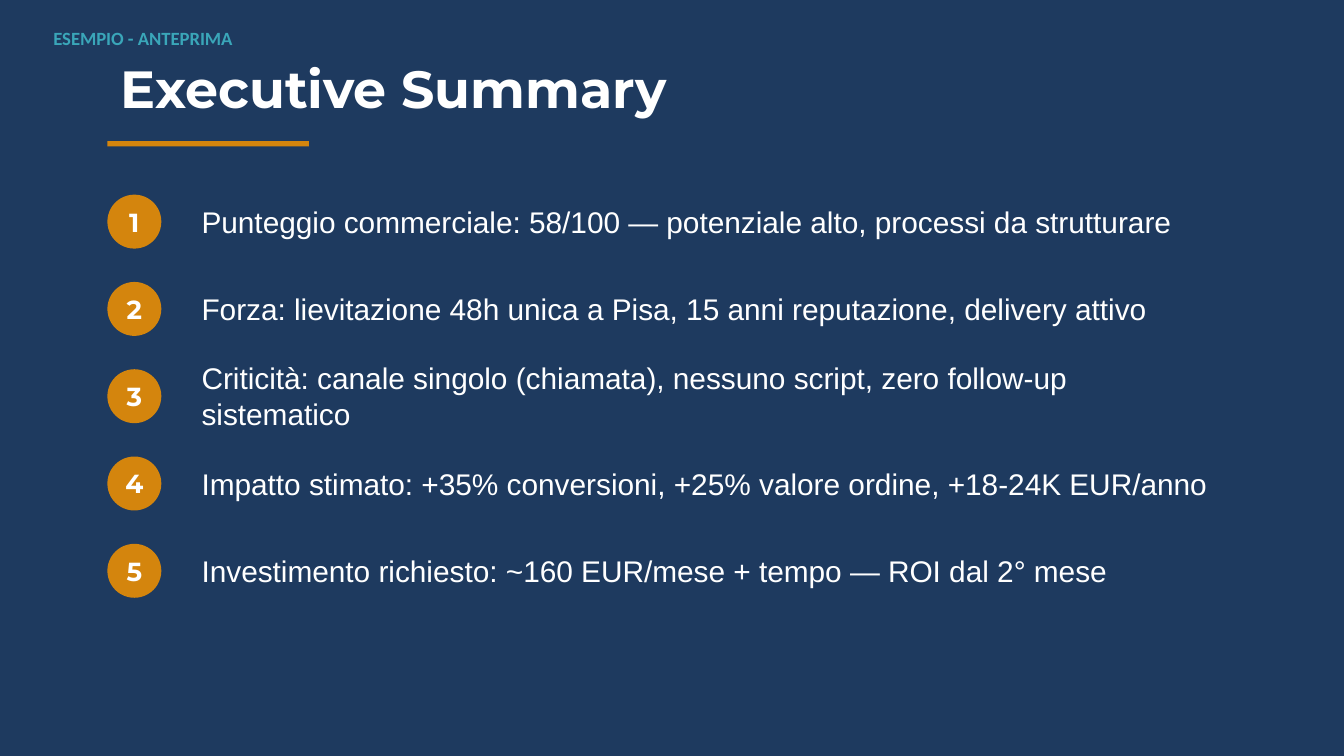
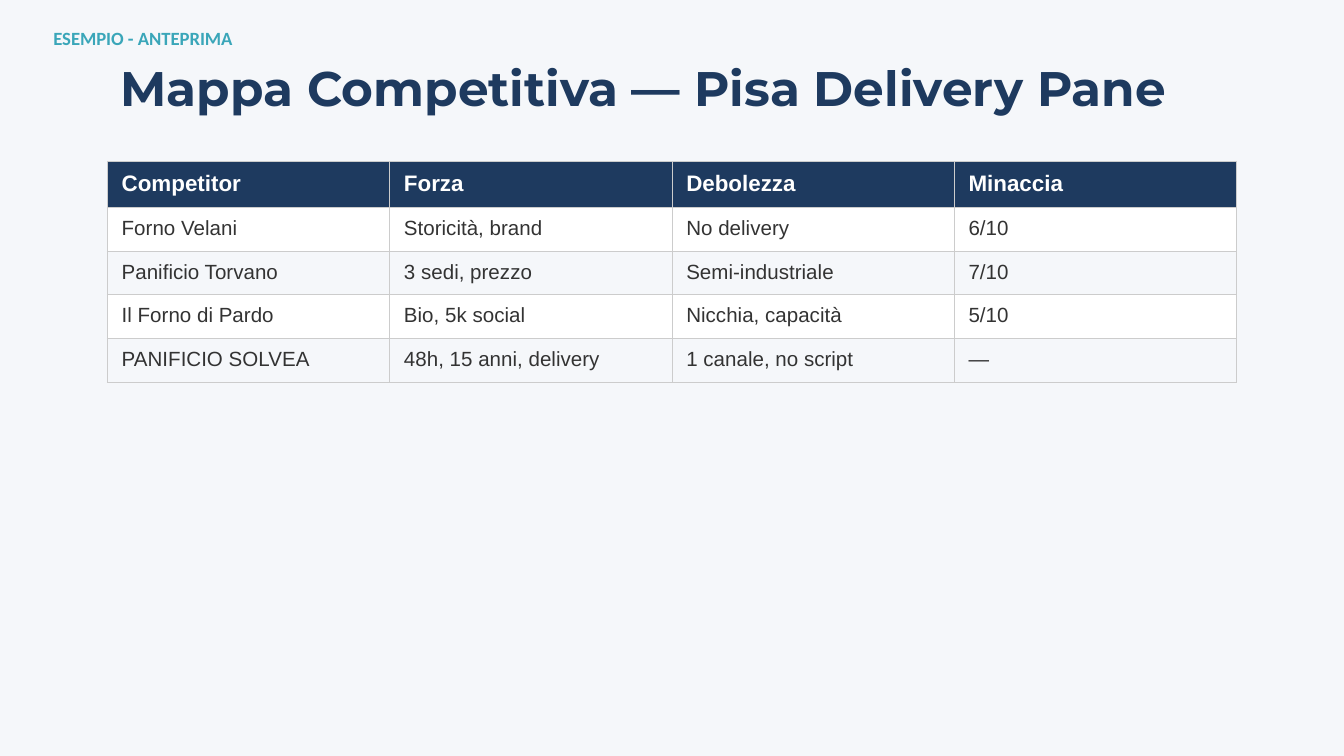
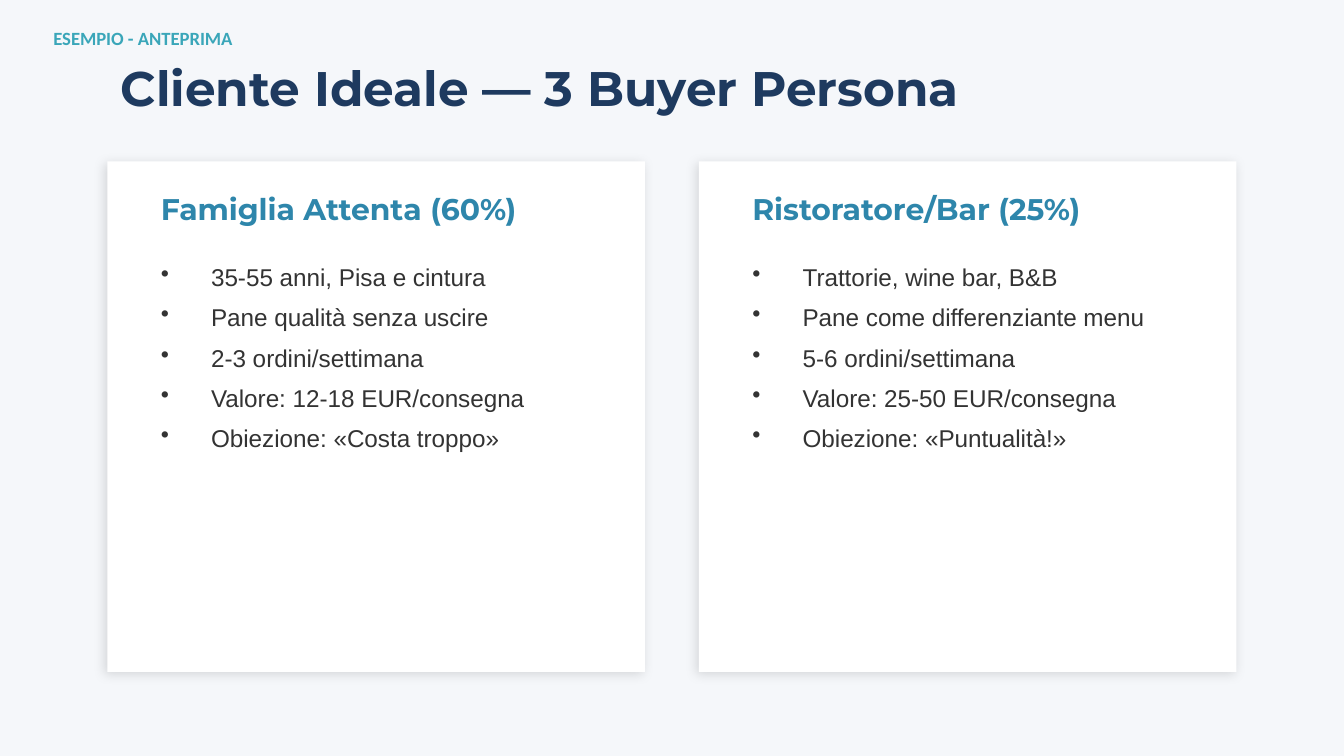
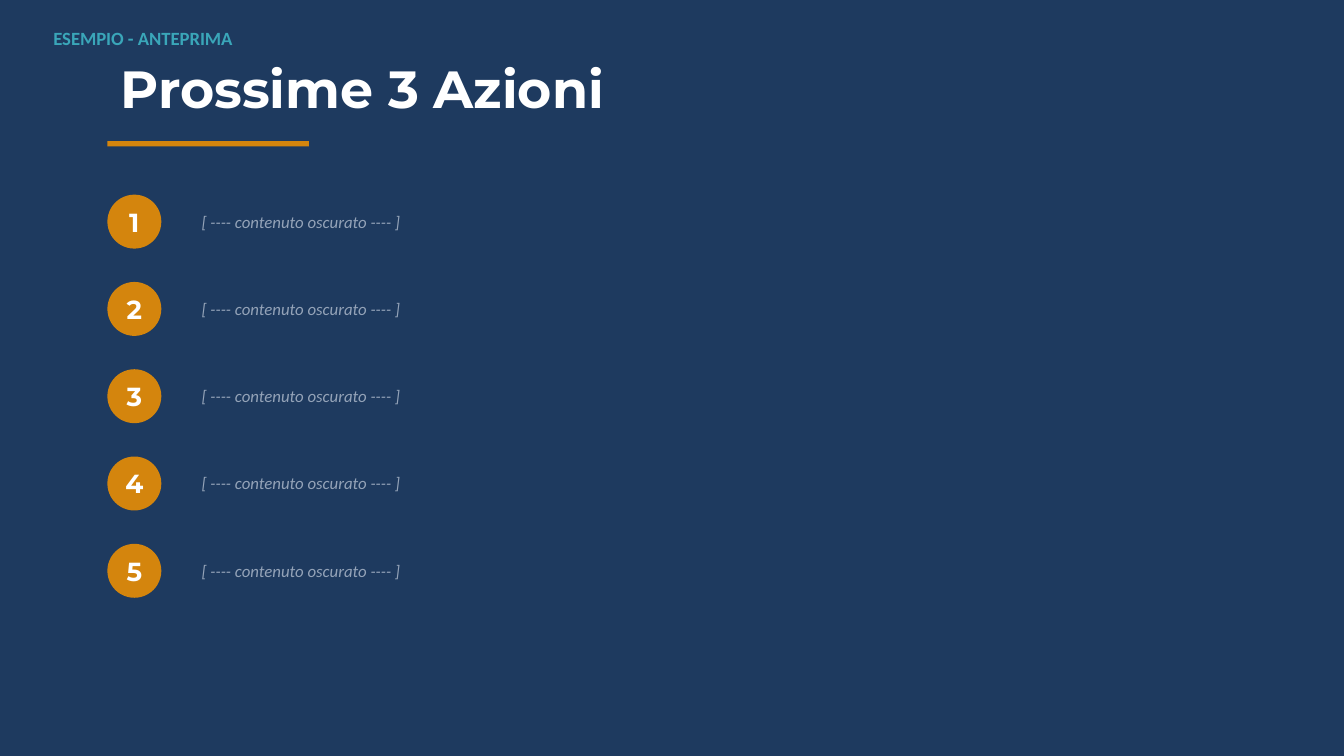
from dataclasses import dataclass

from lxml.etree import SubElement
from pptx import Presentation
from pptx.dml.color import RGBColor
from pptx.enum.shapes import MSO_SHAPE as Preset
from pptx.enum.text import MSO_ANCHOR as Anchor, MSO_AUTO_SIZE as AutoSize, PP_ALIGN as Align
from pptx.oxml.ns import qn
from pptx.util import Cm, Pt

NAVY = "1E3A5F"
ORANGE = "D4850D"
WHITE = "FFFFFF"
PALE = "F5F7FA"
INK = "333333"
GRID = "CCCCCC"
BLUE = "2E86AB"
TEAL = "3AA6B9"
GREY = "94A3B8"

MARGIN = 2.03
CONTENT_WIDTH = 21.34
CONTENT_TOP = 3.05


@dataclass(frozen=True)
class Style:
    font: str
    size: int
    color: str
    bold: bool = False
    italic: bool = False


@dataclass(frozen=True)
class Area:
    left: float
    top: float
    width: float
    height: float

    def lengths(self) -> tuple:
        return Cm(self.left), Cm(self.top), Cm(self.width), Cm(self.height)


@dataclass(frozen=True)
class Persona:
    name: str
    traits: tuple


DARK_TITLE = Style("Montserrat", 28, WHITE, bold=True)
LIGHT_TITLE = Style("Montserrat", 26, NAVY, bold=True)
NUMBER = Style("Montserrat", 14, WHITE, bold=True)
POINT = Style("Arial", 16, WHITE)
MASKED = Style("Calibri", 9, GREY, italic=True)
TAG = Style("Calibri", 10, TEAL, bold=True)
TABLE_HEAD = Style("Arial", 12, WHITE, bold=True)
TABLE_BODY = Style("Arial", 11, INK)
PERSONA_NAME = Style("Montserrat", 16, BLUE, bold=True)
TRAIT = Style("Arial", 13, INK)

SUMMARY = (
    "Punteggio commerciale: 58/100 — potenziale alto, processi da strutturare",
    "Forza: lievitazione 48h unica a Pisa, 15 anni reputazione, delivery attivo",
    "Criticità: canale singolo (chiamata), nessuno script, zero follow-up sistematico",
    "Impatto stimato: +35% conversioni, +25% valore ordine, +18-24K EUR/anno",
    "Investimento richiesto: ~160 EUR/mese + tempo — ROI dal 2° mese",
)
ACTIONS = ("[ ---- contenuto oscurato ---- ]",) * 5
COMPETITORS = (
    ("Competitor", "Forza", "Debolezza", "Minaccia"),
    ("Forno Velani", "Storicità, brand", "No delivery", "6/10"),
    ("Panificio Torvano", "3 sedi, prezzo", "Semi-industriale", "7/10"),
    ("Il Forno di Pardo", "Bio, 5k social", "Nicchia, capacità", "5/10"),
    ("PANIFICIO SOLVEA", "48h, 15 anni, delivery", "1 canale, no script", "—"),
)
PERSONAS = (
    Persona("Famiglia Attenta (60%)", (
        "35-55 anni, Pisa e cintura",
        "Pane qualità senza uscire",
        "2-3 ordini/settimana",
        "Valore: 12-18 EUR/consegna",
        "Obiezione: «Costa troppo»",
    )),
    Persona("Ristoratore/Bar (25%)", (
        "Trattorie, wine bar, B&B",
        "Pane come differenziante menu",
        "5-6 ordini/settimana",
        "Valore: 25-50 EUR/consegna",
        "Obiezione: «Puntualità!»",
    )),
)


def paint(fill, color: str) -> None:
    fill.solid()
    fill.fore_color.rgb = RGBColor.from_string(color)


def format_text(frame, style: Style) -> None:
    for para in frame.paragraphs:
        for span in para.runs:
            span.font.name = style.font
            span.font.size = Pt(style.size)
            span.font.bold = style.bold
            span.font.italic = style.italic
            paint(span.font.fill, style.color)


def add_text(page, area: Area, text: str, style: Style,
             anchor=Anchor.MIDDLE, align=Align.LEFT):
    frame = page.shapes.add_textbox(*area.lengths()).text_frame
    frame.word_wrap = True
    frame.vertical_anchor = anchor
    frame.text = text
    for para in frame.paragraphs:
        para.alignment = align
    format_text(frame, style)
    return frame


def add_block(page, preset, area: Area, color: str):
    shape = page.shapes.add_shape(preset, *area.lengths())
    paint(shape.fill, color)
    shape.line.fill.background()
    shape.shadow.inherit = False
    return shape


def add_soft_shadow(shape) -> None:
    effects = shape._element.spPr.find(qn("a:effectLst"))
    shadow = SubElement(effects, qn("a:outerShdw"), blurRad=str(Pt(6)),
                        dist=str(Pt(2)), dir=str(135 * 60000),
                        algn="bl", rotWithShape="0")
    color = SubElement(shadow, qn("a:srgbClr"), val="000000")
    SubElement(color, qn("a:alpha"), val="12000")


def add_bullets(frame) -> None:
    for para in frame.paragraphs:
        properties = para._p.get_or_add_pPr()
        properties.set("marL", str(Cm(0.95)))
        properties.set("indent", str(-Cm(0.95)))
        SubElement(properties, qn("a:buChar"), char="•")
        para.space_after = Pt(6)


def add_borders(cell) -> None:
    properties = cell._tc.get_or_add_tcPr()
    for side in ("a:lnL", "a:lnR", "a:lnT", "a:lnB"):
        line = SubElement(properties, qn(side), w=str(Pt(0.5)))
        fill = SubElement(line, qn("a:solidFill"))
        SubElement(fill, qn("a:srgbClr"), val=GRID)


def add_page(deck, title: str, dark: bool):
    page = deck.slides.add_slide(deck.slide_layouts[6])
    paint(page.background.fill, NAVY if dark else PALE)
    add_text(page, Area(MARGIN, 0.76, CONTENT_WIDTH, 1.78), title,
             DARK_TITLE if dark else LIGHT_TITLE)
    if dark:
        add_block(page, Preset.RECTANGLE, Area(MARGIN, 2.67, 3.81, 0.1), ORANGE)
    return page


def add_preview_tag(page) -> None:
    frame = add_text(page, Area(0.76, 0.38, 7.62, 0.89), "ESEMPIO - ANTEPRIMA",
                     TAG, Anchor.TOP)
    frame.word_wrap = False
    frame.auto_size = AutoSize.SHAPE_TO_FIT_TEXT


def build_numbered_page(deck, title: str, points: tuple, style: Style) -> None:
    page = add_page(deck, title, dark=True)
    for index, point in enumerate(points):
        top = 3.68 + 1.65 * index
        badge = Area(MARGIN, top, 1.02, 1.02)
        add_block(page, Preset.OVAL, badge, ORANGE)
        add_text(page, badge, str(index + 1), NUMBER, align=Align.CENTER)
        add_text(page, Area(3.56, top - 0.13, 19.81, 1.27), point, style)
    add_preview_tag(page)


def build_competitor_page(deck) -> None:
    page = add_page(deck, "Mappa Competitiva — Pisa Delivery Pane", dark=False)
    area = Area(MARGIN, CONTENT_TOP, CONTENT_WIDTH, 4.13)
    table = page.shapes.add_table(len(COMPETITORS), len(COMPETITORS[0]),
                                  *area.lengths()).table
    for row_index, values in enumerate(COMPETITORS):
        is_head = row_index == 0
        table.rows[row_index].height = Cm(0.85 if is_head else 0.82)
        color = NAVY if is_head else (PALE, WHITE)[row_index % 2]
        for column_index, value in enumerate(values):
            cell = table.cell(row_index, column_index)
            cell.margin_left = cell.margin_right = Cm(0.27)
            cell.margin_top = cell.margin_bottom = Cm(0.18)
            add_borders(cell)
            paint(cell.fill, color)
            cell.text_frame.text = value
            format_text(cell.text_frame, TABLE_HEAD if is_head else TABLE_BODY)
    add_preview_tag(page)


def build_persona_page(deck) -> None:
    page = add_page(deck, "Cliente Ideale — 3 Buyer Persona", dark=False)
    for index, persona in enumerate(PERSONAS):
        left = MARGIN + 11.18 * index
        card = add_block(page, Preset.RECTANGLE,
                         Area(left, CONTENT_TOP, 10.16, 9.65), WHITE)
        add_soft_shadow(card)
        inner_left = left + 0.76
        add_text(page, Area(inner_left, 3.3, 8.64, 1.27), persona.name, PERSONA_NAME)
        traits = add_text(page, Area(inner_left, 4.83, 8.64, 7.11),
                          "\n".join(persona.traits), TRAIT, Anchor.TOP)
        add_bullets(traits)
    add_preview_tag(page)


def main() -> None:
    deck = Presentation()
    deck.slide_width = Cm(25.4)
    deck.slide_height = Cm(14.29)
    build_numbered_page(deck, "Executive Summary", SUMMARY, POINT)
    build_competitor_page(deck)
    build_persona_page(deck)
    build_numbered_page(deck, "Prossime 3 Azioni", ACTIONS, MASKED)
    deck.save("out.pptx")


if __name__ == "__main__":
    main()
